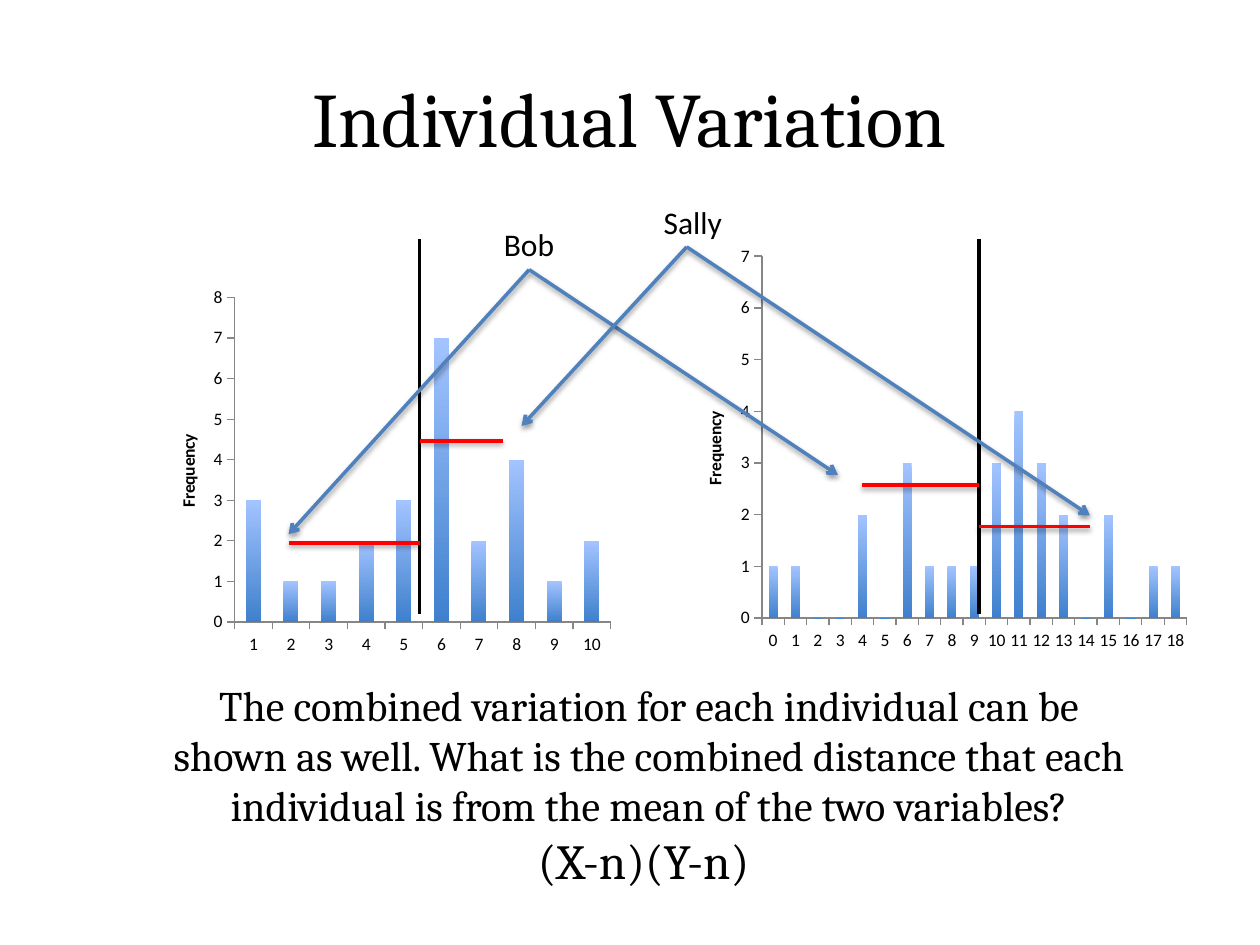
"""Build the Individual Variation slide."""
from dataclasses import dataclass

from lxml import etree
from pptx import Presentation
from pptx.chart.data import CategoryChartData
from pptx.dml.color import RGBColor as RGB
from pptx.enum.chart import XL_CHART_TYPE as CT, XL_TICK_MARK as TICK
from pptx.enum.shapes import MSO_CONNECTOR as CONN
from pptx.enum.text import MSO_ANCHOR as ANCHOR, MSO_AUTO_SIZE as AUTO, PP_ALIGN as AL
from pptx.oxml import parse_xml
from pptx.oxml.ns import nsdecls, qn
from pptx.util import Pt


@dataclass(frozen=True)
class Theme:
    """Colours, fonts and type sizes of the slide."""
    ink: RGB = RGB(0, 0, 0)
    arrow: RGB = RGB(0x4F, 0x81, 0xBD)
    distance: RGB = RGB(0xFF, 0, 0)
    axis: RGB = RGB(0x86, 0x86, 0x86)
    bar_top: RGB = RGB(0xA3, 0xC4, 0xFF)
    bar_base: RGB = RGB(0x3F, 0x80, 0xCD)
    serif: str = "Cambria"
    sans: str = "Calibri"
    title: int = 44
    formula: int = 28
    body: int = 24
    label: int = 18
    chart: int = 10
    line: int = 2


def write(p, text, *, size, font, color, align=None):
    """Add a formatted run to a paragraph."""
    r = p.add_run()
    r.text = text
    r.font.size, r.font.name = Pt(size), font
    r.font.color.rgb = color
    if align is not None:
        p.alignment = align
    return r


class SlideBuilder:
    """Draws the kinds of element on one slide in one style."""

    def __init__(self, s, theme):
        """Keep the slide and its theme."""
        self.s, self.t = s, theme

    def title(self, text, x, y, w, h):
        """Place the title placeholder and fill it."""
        sp = self.s.shapes.title
        sp.left, sp.top, sp.width, sp.height = map(Pt, (x, y, w, h))
        tf = sp.text_frame
        tf.vertical_anchor = ANCHOR.MIDDLE
        write(tf.paragraphs[0], text, size=self.t.title, font=self.t.serif,
              color=self.t.ink, align=AL.CENTER)

    def text_box(self, shapes, x, y, w, h, wrap=True):
        """Add a growing text box and return its first paragraph."""
        tf = shapes.add_textbox(*map(Pt, (x, y, w, h))).text_frame
        tf.word_wrap, tf.auto_size = wrap, AUTO.SHAPE_TO_FIT_TEXT
        return tf.paragraphs[0]

    def question(self, text, formula, x, y, w, h):
        """Add the closing question with its formula on a new line."""
        p = self.text_box(self.s.shapes, x, y, w, h)
        style = dict(font=self.t.serif, color=self.t.ink, align=AL.CENTER)
        write(p, text, size=self.t.body, **style)
        p.add_line_break()
        write(p, formula, size=self.t.formula, **style)

    def line(self, shapes, start, end, color, arrow=False, shadow=True):
        """Add a straight line, optionally with arrowhead and shadow."""
        sp = shapes.add_connector(CONN.STRAIGHT, *map(Pt, (*start, *end)))
        sp.line.color.rgb, sp.line.width = color, Pt(self.t.line)
        pr = sp._element.spPr
        if arrow:
            etree.SubElement(pr.find(qn("a:ln")), qn("a:tailEnd"), type="arrow")
        effects = etree.SubElement(pr, qn("a:effectLst"))
        if shadow:
            effects.append(parse_xml(
                f'<a:outerShdw {nsdecls("a")} blurRad="{Pt(3.1)}" dist="{Pt(1.6)}" '
                'dir="5400000" rotWithShape="0"><a:srgbClr val="000000">'
                '<a:alpha val="38000"/></a:srgbClr></a:outerShdw>'))

    def person(self, name, box, origin, targets, distances):
        """Group a name with its arrows and distances from the means."""
        shapes = self.s.shapes.add_group_shape().shapes
        write(self.text_box(shapes, *box, wrap=False), name,
              size=self.t.label, font=self.t.sans, color=self.t.ink)
        for target in targets:
            self.line(shapes, origin, target, self.t.arrow, arrow=True)
        for x1, x2, y in distances:
            self.line(shapes, (x1, y), (x2, y), self.t.distance)

    def histogram(self, box, first, counts, top, plot):
        """Add a frequency chart with the plot area at given fractions."""
        data = CategoryChartData()
        data.categories = [str(first + i) for i in range(len(counts))]
        data.add_series("Series 1", counts)
        chart = self.s.shapes.add_chart(CT.COLUMN_STACKED, *map(Pt, box), data).chart
        chart.has_title = chart.has_legend = False
        chart.font.size, chart.font.name = Pt(self.t.chart), self.t.sans
        chart.font.color.rgb = self.t.ink
        bars = chart.plots[0]
        bars.gap_width, bars.overlap, bars.vary_by_categories = 150, 100, False
        fill = bars.series[0].format.fill
        fill.gradient()
        fill.gradient_angle = 270
        for stop, color in zip(fill.gradient_stops, (self.t.bar_top, self.t.bar_base)):
            stop.color.rgb = color
        for axis in (chart.category_axis, chart.value_axis):
            axis.has_major_gridlines = False
            axis.major_tick_mark, axis.minor_tick_mark = TICK.OUTSIDE, TICK.NONE
            axis.format.line.color.rgb = self.t.axis
            axis.tick_labels.number_format = "0"
            axis.tick_labels.number_format_is_linked = False
        values = chart.value_axis
        values.minimum_scale, values.maximum_scale, values.major_unit = 0, top, 1
        r = write(values.axis_title.text_frame.paragraphs[0], "Frequency",
                  size=self.t.chart, font=self.t.sans, color=self.t.ink)
        r.font.bold = True
        self.place_plot(chart, plot)

    def place_plot(self, chart, plot):
        """Fix the inner plot area of a chart."""
        area = chart._chartSpace.chart.plotArea
        for old in area.findall(qn("c:layout")):
            area.remove(old)
        layout = etree.Element(qn("c:layout"))
        manual = etree.SubElement(layout, qn("c:manualLayout"))
        settings = [("layoutTarget", "inner"), ("xMode", "edge"), ("yMode", "edge"),
                    *zip("xywh", plot)]
        for tag, val in settings:
            etree.SubElement(manual, qn(f"c:{tag}"), val=str(val))
        area.insert(0, layout)


def main():
    """Build and save the slide."""
    prs = Presentation()
    prs.slide_width, prs.slide_height = Pt(720), Pt(540)
    t = Theme()
    b = SlideBuilder(prs.slides.add_slide(prs.slide_layouts[5]), t)
    mean_x, mean_y = 239.8, 559.4

    b.title("Individual Variation", 36, 21.6, 648, 90)
    b.histogram((85.7, 159.1, 268.6, 218.2), 1, (3, 1, 1, 2, 3, 7, 2, 4, 1, 2),
                8, (0.18, 0.05, 0.8, 0.85))
    b.histogram((388, 136.8, 296, 240.5), 0,
                (1, 1, 0, 0, 2, 0, 3, 1, 1, 1, 3, 4, 3, 2, 0, 2, 0, 1, 1),
                7, (0.16, 0.04, 0.82, 0.86))
    for x in (mean_x, mean_y):
        b.line(b.s.shapes, (x, 350.6), (x, 136.8), t.ink, shadow=False)
    b.question("The combined variation for each individual can be shown as well. "
               "What is the combined distance that each individual is from the "
               "mean of the two variables?", "(X-n)(Y-n) ", 85.7, 384.5, 570.2, 191.5)
    b.person("Bob", (280.8, 125.3, 43.9, 28.8), (302.4, 154.1),
             [(164.9, 305.3), (478.8, 271.4)],
             [(164.9, mean_x, 310.3), (492.5, mean_y, 277.2)])
    b.person("Sally", (372.2, 112.3, 48.2, 28.8), (392.4, 141.1),
             [(298.1, 243.4), (622.8, 294.5)],
             [(mean_x, 287.3, 252), (mean_y, 622.8, 301)])
    prs.save("out.pptx")


if __name__ == "__main__":
    main()
